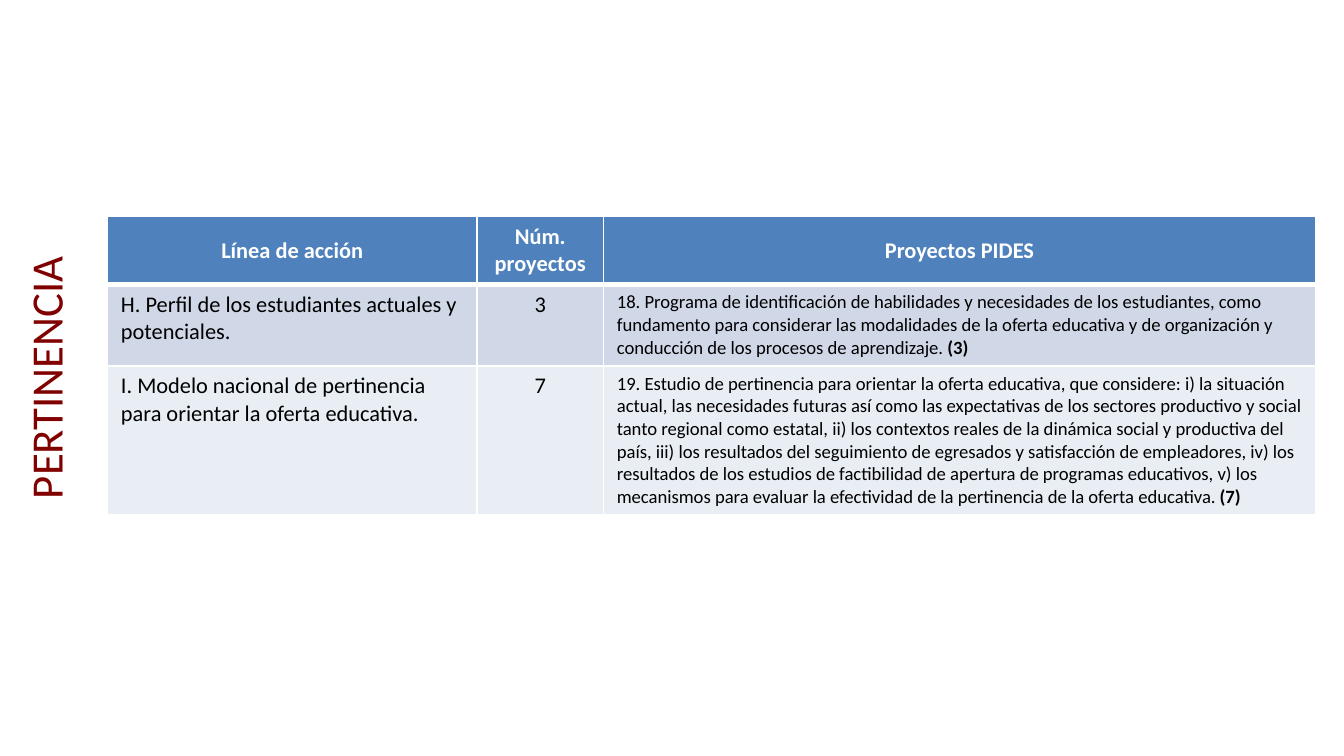
from dataclasses import dataclass

from lxml import etree
from pptx import Presentation
from pptx.dml.color import RGBColor
from pptx.enum import text
from pptx.oxml.ns import qn
from pptx.util import Inches, Pt


@dataclass(frozen=True)
class Theme:
    font: str = "Calibri"
    title: str = "800000"
    header: str = "4F81BD"
    bands: tuple[str, str] = ("D0D8E8", "E9EDF4")
    light: str = "FFFFFF"
    dark: str = "000000"
    title_size: int = 24
    body_size: int = 12
    detail_size: int = 10
    rule: int = 1
    header_rule: int = 3


@dataclass(frozen=True)
class ActionLine:
    name: str
    count: int
    project: str
    height: float


THEME = Theme()
SLIDE_WIDTH = Inches(10)
SLIDE_HEIGHT = SLIDE_WIDTH * 9 // 16
HEADERS = ("Línea de acción", "Núm. proyectos", "Proyectos PIDES")
HEADER_HEIGHT = 0.5
COLUMN_WIDTHS = (2.75, 0.94, 5.3)
ACTION_LINES = (
    ActionLine(
        "H. Perfil de los estudiantes actuales y potenciales.",
        3,
        "18. Programa de identificación de habilidades y necesidades de los "
        "estudiantes, como fundamento para considerar las modalidades de la oferta "
        "educativa y de organización y conducción de los procesos de aprendizaje.",
        0.6,
    ),
    ActionLine(
        "I. Modelo nacional de pertinencia para orientar la oferta educativa.",
        7,
        "19. Estudio de pertinencia para orientar la oferta educativa, que considere: "
        "i) la situación actual, las necesidades futuras así como las expectativas de "
        "los sectores productivo y social tanto regional como estatal, ii) los contextos "
        "reales de la dinámica social y productiva del país, iii) los resultados del "
        "seguimiento de egresados y satisfacción de empleadores, iv) los resultados de "
        "los estudios de factibilidad de apertura de programas educativos, v) los "
        "mecanismos para evaluar la efectividad de la pertinencia de la oferta educativa.",
        1.11,
    ),
)


def format_paragraph(p, size: int, color: str, align=text.PP_ALIGN.LEFT) -> None:
    p.alignment = align
    p.font.name = THEME.font
    p.font.size = Pt(size)
    p.font.color.rgb = RGBColor.from_string(color)


def add_run(p, content: str, bold: bool = False) -> None:
    r = p.add_run()
    r.text = content
    r.font.bold = bold


def style_cell(cell, fill: str, top: int, bottom: int) -> None:
    tc_pr = cell._tc.get_or_add_tcPr()
    widths = {"lnL": THEME.rule, "lnR": THEME.rule, "lnT": top, "lnB": bottom}
    for side, width in widths.items():
        line = etree.SubElement(tc_pr, qn(f"a:{side}"), w=str(Pt(width)))
        solid = etree.SubElement(line, qn("a:solidFill"))
        etree.SubElement(solid, qn("a:srgbClr"), val=THEME.light)
    cell.fill.solid()
    cell.fill.fore_color.rgb = RGBColor.from_string(fill)


def add_title(slide, content: str) -> None:
    title = slide.shapes.title
    title.left, title.top = Inches(-2.48), Inches(2.34)
    title.width, title.height = SLIDE_HEIGHT, Inches(0.94)
    title.rotation = 270
    tf = title.text_frame
    tf.vertical_anchor = text.MSO_ANCHOR.MIDDLE
    p = tf.paragraphs[0]
    format_paragraph(p, THEME.title_size, THEME.title, text.PP_ALIGN.CENTER)
    add_run(p, content)


def fill_header(table) -> None:
    table.rows[0].height = Inches(HEADER_HEIGHT)
    for cell, label in zip(table.rows[0].cells, HEADERS):
        style_cell(cell, THEME.header, THEME.rule, THEME.header_rule)
        cell.vertical_anchor = text.MSO_ANCHOR.MIDDLE
        p = cell.text_frame.paragraphs[0]
        format_paragraph(p, THEME.body_size, THEME.light, text.PP_ALIGN.CENTER)
        add_run(p, label, bold=True)


def fill_row(table, index: int, item: ActionLine) -> None:
    row = table.rows[index]
    row.height = Inches(item.height)
    top = THEME.header_rule if index == 1 else THEME.rule
    for cell in row.cells:
        style_cell(cell, THEME.bands[(index - 1) % 2], top, THEME.rule)
    name, count, project = (cell.text_frame.paragraphs[0] for cell in row.cells)
    format_paragraph(name, THEME.body_size, THEME.dark)
    add_run(name, item.name)
    format_paragraph(count, THEME.body_size, THEME.dark, text.PP_ALIGN.CENTER)
    add_run(count, str(item.count))
    format_paragraph(project, THEME.detail_size, THEME.dark)
    project.space_before = project.space_after = Pt(3)
    add_run(project, item.project)
    add_run(project, f" ({item.count})", bold=True)


def add_projects_table(slide) -> None:
    height = HEADER_HEIGHT + sum(item.height for item in ACTION_LINES)
    frame = slide.shapes.add_table(
        len(ACTION_LINES) + 1, len(HEADERS),
        Inches(0.8), Inches(1.61), Inches(sum(COLUMN_WIDTHS)), Inches(height),
    )
    table = frame.table
    for column, width in zip(table.columns, COLUMN_WIDTHS):
        column.width = Inches(width)
    fill_header(table)
    for index, item in enumerate(ACTION_LINES, start=1):
        fill_row(table, index, item)


def main() -> None:
    prs = Presentation()
    prs.slide_width, prs.slide_height = SLIDE_WIDTH, SLIDE_HEIGHT
    slide = prs.slides.add_slide(prs.slide_layouts[5])
    add_title(slide, "PERTINENCIA")
    add_projects_table(slide)
    prs.save("out.pptx")


if __name__ == "__main__":
    main()
